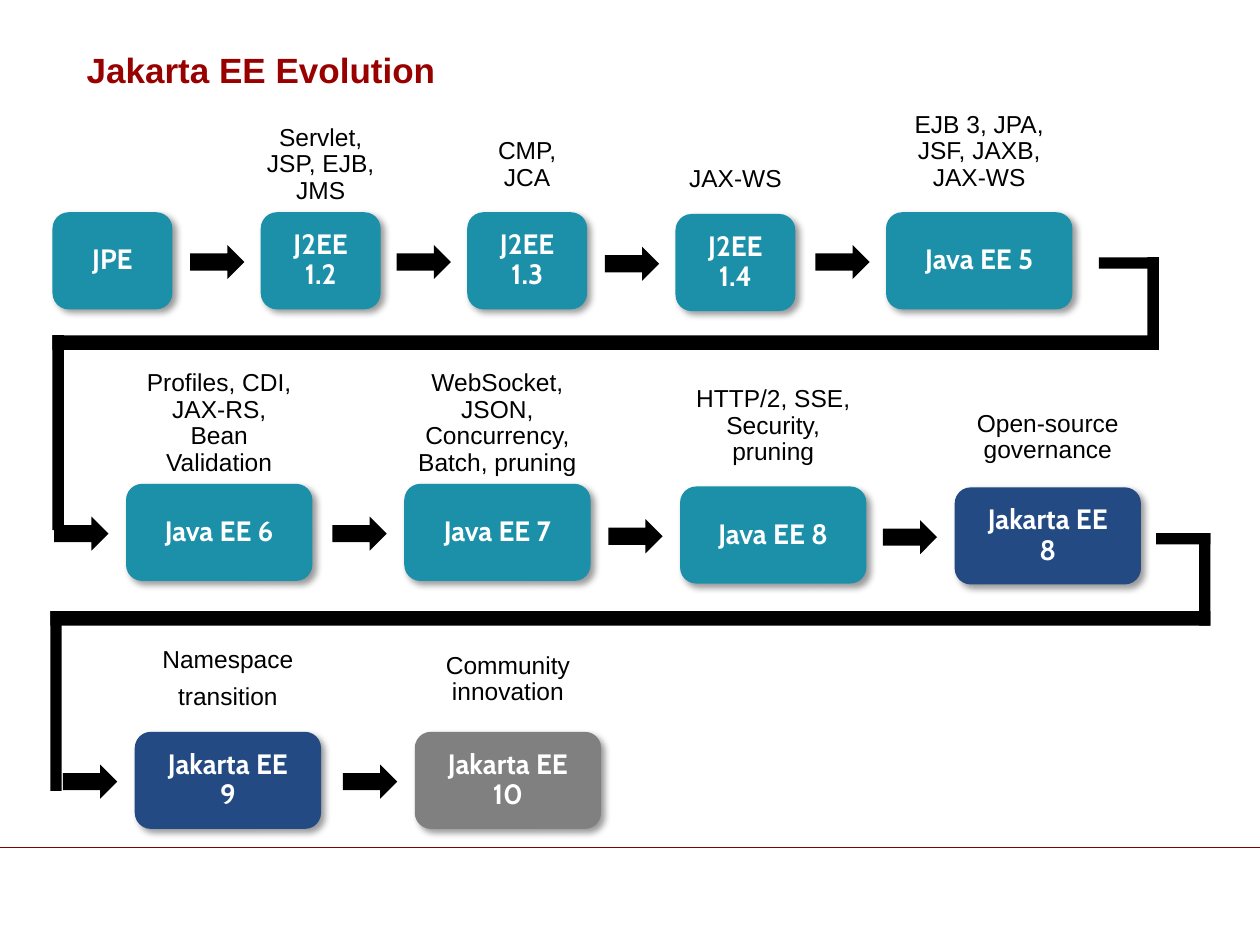
from dataclasses import dataclass

from lxml import etree
from pptx import Presentation
from pptx.dml.color import RGBColor
from pptx.enum import shapes, text
from pptx.oxml import ns
from pptx.util import Pt

BLACK, WHITE = "000000", "FFFFFF"
TEAL, NAVY, GRAY = "1C90A9", "234A82", "808080"
TITLE_RED, RULE_RED = "990000", "800000"
STAGE_HEIGHT = 55.5
NARROW, WIDE = 68.5, 106.5
ARROW_WIDTH, ARROW_HEIGHT = 31, 19.5
ARM, BAR, BAR_DROP = 6.5, 8.3, 44.6


@dataclass
class Stage:
    name: str
    left: float
    width: float
    fill: str = TEAL
    caption: tuple = ()
    caption_size: tuple = (0, 0)
    drop: float = 0
    lift: float = 0
    arrow: bool = True


ROWS = [
    (121.3, 40.3, [
        Stage("JPE", 30, NARROW, arrow=False),
        Stage("J2EE 1.2", 149, NARROW, TEAL, ("Servlet, JSP, EJB, JMS",), (106.5, 54)),
        Stage("J2EE 1.3", 267, NARROW, TEAL, ("CMP, JCA",), (80.5, 54)),
        Stage("J2EE 1.4", 386, NARROW, TEAL, ("JAX-WS",), (106.5, 39), drop=1),
        Stage("Java EE 5", 506.3, WIDE, TEAL, ("EJB 3, JPA, JSF, JAXB, JAX-WS",), (106.5, 69)),
    ]),
    (276.5, 41, [
        Stage("Java EE 6", 72, WIDE, TEAL, ("Profiles, CDI, JAX-RS, Bean Validation",), (112.5, 69)),
        Stage("Java EE 7", 231, WIDE, TEAL, ("WebSocket, JSON, Concurrency, Batch, pruning",), (144.5, 69)),
        Stage("Java EE 8", 388.6, WIDE, TEAL, ("HTTP/2, SSE, Security, pruning",), (120, 69), drop=1.5),
        Stage("Jakarta EE 8", 545.5, WIDE, NAVY, ("Open-source governance",), (120, 54), drop=2, lift=1.5),
    ]),
    (418.2, 41, [
        Stage("Jakarta EE 9", 77, WIDE, NAVY, ("Namespace", "transition"), (120, 60)),
        Stage("Jakarta EE 10", 237, WIDE, GRAY, ("Community innovation",), (120, 54), lift=3),
    ]),
]


def color(value):
    return RGBColor.from_string(value)


def add_block(page, kind, left, top, width, height, fill=BLACK):
    block = page.shapes.add_shape(kind, Pt(left), Pt(top), Pt(width), Pt(height))
    block.shadow.inherit = False
    block.fill.solid()
    block.fill.fore_color.rgb = color(fill)
    block.line.fill.background()
    return block


def cast_shadow(block):
    effects = block._element.spPr.find(ns.qn("a:effectLst"))
    shadow = etree.SubElement(effects, ns.qn("a:outerShdw"), blurRad=str(Pt(4)),
                              dist=str(Pt(3)), dir="2700000", algn="tl", rotWithShape="0")
    shade = etree.SubElement(shadow, ns.qn("a:srgbClr"), val=BLACK)
    etree.SubElement(shade, ns.qn("a:alpha"), val="40000")


def write_centered(box, lines, size, font, ink, bold=False, after=0):
    frame = box.text_frame
    frame.word_wrap = True
    frame.auto_size = text.MSO_AUTO_SIZE.NONE
    frame.vertical_anchor = text.MSO_ANCHOR.MIDDLE
    frame.margin_left = frame.margin_right = Pt(14.4)
    frame.margin_top = frame.margin_bottom = Pt(11.5)
    for index, line in enumerate(lines):
        para = frame.add_paragraph() if index else frame.paragraphs[0]
        para.alignment = text.PP_ALIGN.CENTER
        para.line_spacing = 0.9
        para.space_after = Pt(after)
        add_span(para, line, size, font, ink, bold)


def add_span(para, words, size, font, ink, bold):
    span = para.add_run()
    span.text = words
    span.font.size = Pt(size)
    span.font.name = font
    span.font.bold = bold
    span.font.color.rgb = color(ink)


def add_title(page, left, top, width, height):
    box = page.shapes.add_textbox(Pt(left), Pt(top), Pt(width), Pt(height))
    box.text_frame.word_wrap = True
    box.text_frame.vertical_anchor = text.MSO_ANCHOR.MIDDLE
    add_span(box.text_frame.paragraphs[0], "Jakarta EE Evolution", 20, "Arial", TITLE_RED, True)


def add_footer_rule(page, top, width):
    rule = page.shapes.add_connector(shapes.MSO_CONNECTOR.STRAIGHT, Pt(0), Pt(top), Pt(width), Pt(top))
    rule.line.color.rgb = color(RULE_RED)
    rule.line.width = Pt(0.25)
    etree.SubElement(rule._element.spPr, ns.qn("a:effectLst"))


def add_stage(page, stage, top, arrow_lead):
    top += stage.drop
    if stage.arrow:
        add_block(page, shapes.MSO_SHAPE.RIGHT_ARROW, stage.left - arrow_lead,
                  top + (STAGE_HEIGHT - ARROW_HEIGHT) / 2 + 0.7, ARROW_WIDTH, ARROW_HEIGHT)
    block = add_block(page, shapes.MSO_SHAPE.ROUNDED_RECTANGLE, stage.left, top,
                      stage.width, STAGE_HEIGHT, stage.fill)
    cast_shadow(block)
    write_centered(block, [stage.name], 16, "Cabin", WHITE, bold=True)
    if stage.caption:
        width, height = stage.caption_size
        box = page.shapes.add_textbox(Pt(stage.left + (stage.width - width) / 2),
                                      Pt(top - stage.lift - height), Pt(width), Pt(height))
        write_centered(box, stage.caption, 14, "Arial", BLACK, after=6)


def add_return_path(page, left, top, right, bottom, stub):
    bar_top = top + BAR_DROP
    for part in (
        (right - stub, top, stub, ARM),
        (right - ARM, top, ARM, BAR_DROP + BAR),
        (left, bar_top, right - left, BAR),
        (left, bar_top, ARM, bottom - bar_top),
    ):
        add_block(page, shapes.MSO_SHAPE.RECTANGLE, *part)


def main():
    deck = Presentation()
    deck.slide_width, deck.slide_height = Pt(720), Pt(540)
    page = deck.slides.add_slide(deck.slide_layouts[6])
    add_footer_rule(page, 484, 720)
    add_title(page, 42.5, 25.2, 648, 28.8)
    for top, arrow_lead, stages in ROWS:
        for stage in stages:
            add_stage(page, stage, top, arrow_lead)
    add_return_path(page, 30, 147, 662.2, 303, 34.2)
    add_return_path(page, 28.8, 304.6, 691.7, 452, 31)
    deck.save("out.pptx")


if __name__ == "__main__":
    main()
